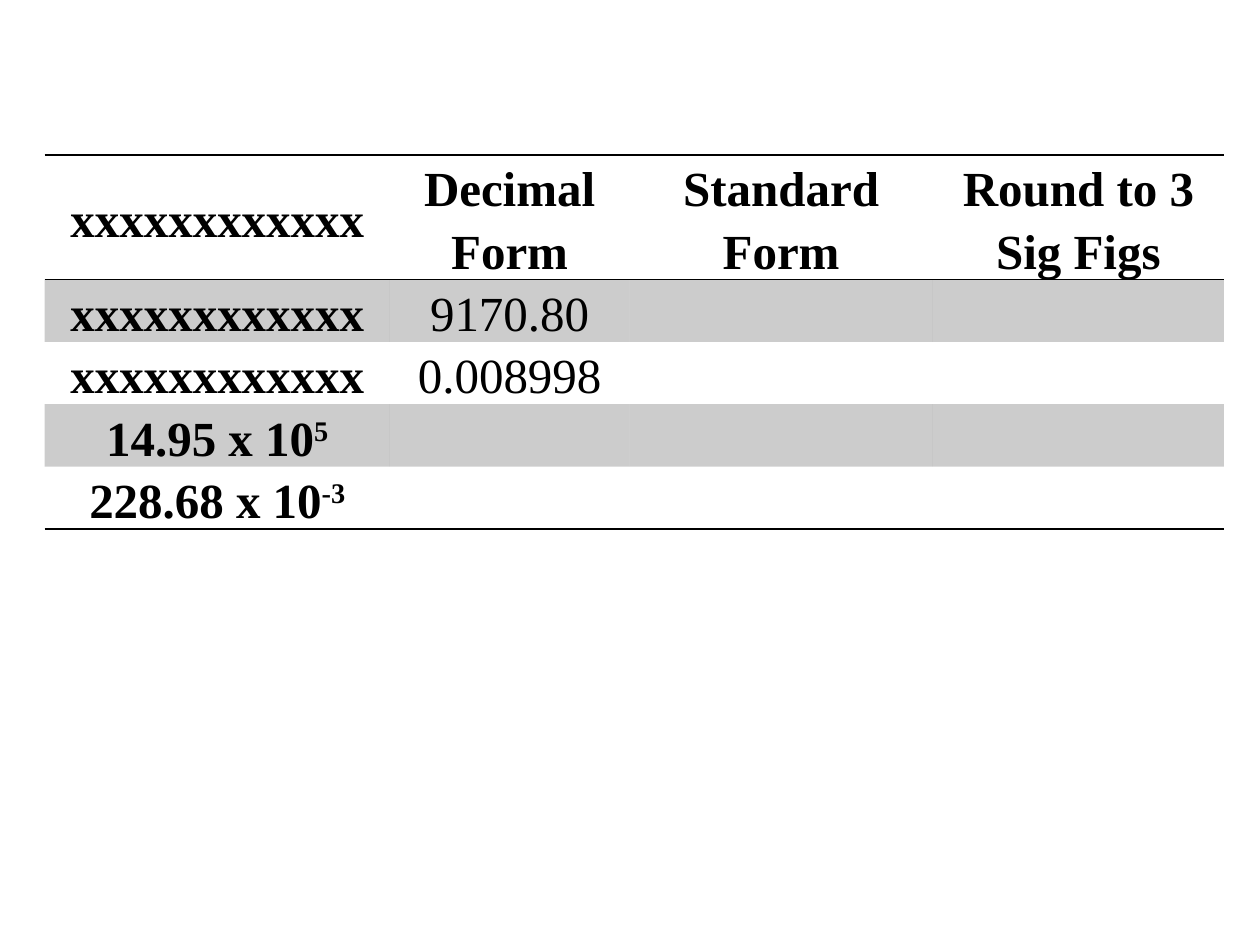
"""Build a slide with a table of numbers in decimal and standard form."""
from lxml.etree import SubElement
from pptx import Presentation
from pptx.dml.color import RGBColor
from pptx.enum.text import MSO_ANCHOR as Anchor, PP_ALIGN as Align
from pptx.oxml import parse_xml
from pptx.oxml.ns import nsdecls, qn
from pptx.util import Pt

COLORS = {"ink": "000000"}
NO_STYLE = "{2D5ABB26-0587-4C30-8999-92F81FD0307C}"
COLUMN_WIDTHS = [197.3, 136.8, 173.5, 166.3]
ROW_HEIGHTS = [71] + [35.6] * 4
HIDDEN = "xxxxxxxxxxxx"
ROWS = [
    [[[HIDDEN]], [["Decimal Form"]], [["Standard"], ["Form"]], [["Round to 3 Sig Figs"]]],
    [[[HIDDEN]], [["9170.80"]], [], []],
    [[[HIDDEN]], [["0.008998"]], [], []],
    [[["14.95 x 10", "5"]], [], [], []],
    [[["228.68 x 10", "-3"]], [], [], []],
]
BORDERS = {0: ["lnT", "lnB"], 4: ["lnB"]}


def add_border(cell, side):
    cell._tc.get_or_add_tcPr().append(parse_xml(
        f'<a:{side} {nsdecls("a")} w="{Pt(1)}"><a:solidFill>'
        f'<a:srgbClr val="{COLORS["ink"]}"/></a:solidFill></a:{side}>'))


def write_cell(cell, paragraphs, bold):
    for index, runs in enumerate(paragraphs):
        frame = cell.text_frame
        paragraph = frame.add_paragraph() if index else frame.paragraphs[0]
        paragraph.alignment = Align.CENTER
        paragraph.line_spacing = 1.15
        for position, text in enumerate(runs):
            run = paragraph.add_run()
            run.text = text
            run.font.name = "Times New Roman"
            run.font.size = Pt(28)
            run.font.bold = bold
            run.font.color.rgb = RGBColor.from_string(COLORS["ink"])
            if position:
                run.font._element.set("baseline", "30000")


presentation = Presentation()
presentation.slide_width, presentation.slide_height = Pt(720), Pt(540)
slide = presentation.slides.add_slide(presentation.slide_layouts[6])

shape = slide.shapes.add_table(
    len(ROWS), len(COLUMN_WIDTHS), Pt(25.5), Pt(88.5),
    Pt(sum(COLUMN_WIDTHS)), Pt(sum(ROW_HEIGHTS)))
table = shape.table
table.first_row = table.horz_banding = False
next(shape.element.iter(qn("a:tableStyleId"))).text = NO_STYLE

for column, width in zip(table.columns, COLUMN_WIDTHS):
    column.width = Pt(width)
for row, height in zip(table.rows, ROW_HEIGHTS):
    row.height = Pt(height)

for row_index, row in enumerate(ROWS):
    for column_index, paragraphs in enumerate(row):
        cell = table.cell(row_index, column_index)
        cell.vertical_anchor = Anchor.MIDDLE
        cell.margin_left = cell.margin_right = Pt(5)
        cell.margin_top = cell.margin_bottom = Pt(0)
        write_cell(cell, paragraphs, row_index == 0 or column_index == 0)
        for side in BORDERS.get(row_index, []):
            add_border(cell, side)
        if row_index % 2:
            cell.fill.solid()
            cell.fill.fore_color.rgb = RGBColor.from_string(COLORS["ink"])
            color = next(cell._tc.tcPr.iterchildren(qn("a:solidFill")))[0]
            SubElement(color, qn("a:alpha")).set("val", "20000")
        else:
            cell.fill.background()

presentation.save("out.pptx")
